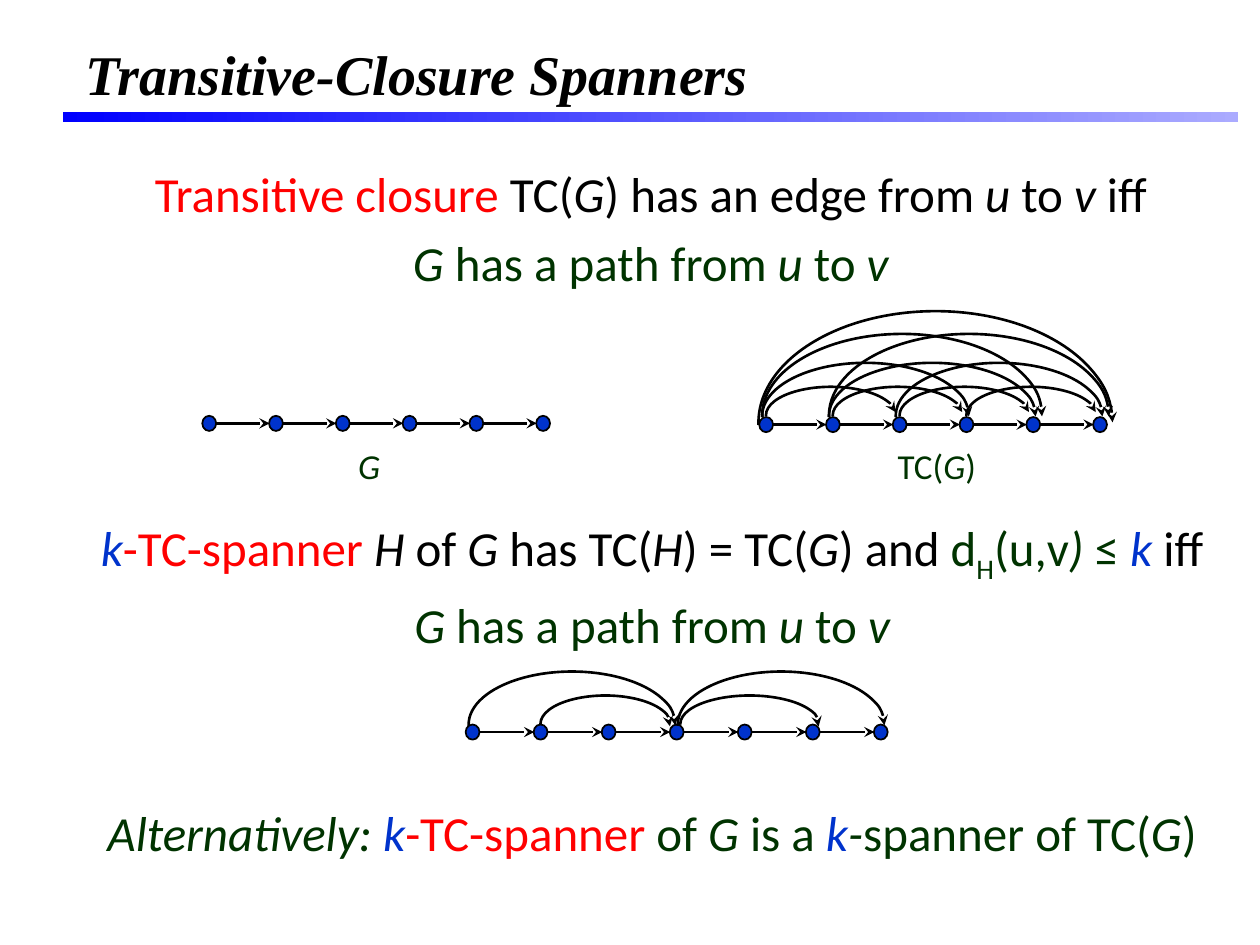
from lxml import etree
from pptx import Presentation
from pptx import util as u
from pptx.dml.color import RGBColor
from pptx.enum import shapes, text
from pptx.oxml.ns import qn

Inches, Pt = u.Inches, u.Pt
COLORS = {"black": "000000", "red": "FF0000", "green": "003300", "blue": "0033CC",
          "bar_start": "0000FF", "bar_end": "ABABFF"}
DOT_WIDTH, DOT_HEIGHT = 0.12, 0.11
ARC_START = 107.55
PATH_CLAIM = [("green", "*G *has a path from* u *to *v*")]


def rgb(name):
    return RGBColor.from_string(COLORS[name])


def add_runs(para, pieces, size, font="Calibri", bold=None):
    """Each piece is (colour, text[, baseline]); asterisks switch italics on and off."""
    for color, marked, *baseline in pieces:
        for index, words in enumerate(marked.split("*")):
            if not words:
                continue
            span = para.add_run()
            span.text = words
            span.font.name, span.font.size, span.font.bold = font, Pt(size), bold
            span.font.italic = index % 2 == 1
            span.font.color.rgb = rgb(color)
            if baseline:
                span.font._element.set("baseline", str(baseline[0]))


def add_box(page, left, top, width, height, wrap=True):
    box = page.shapes.add_textbox(*map(Inches, (left, top, width, height)))
    box.text_frame.word_wrap = wrap
    return box.text_frame


def add_heading(page, left, top, width, height):
    bar = page.shapes.add_shape(shapes.MSO_SHAPE.RECTANGLE, Inches(left - 0.08),
                                Inches(top + 0.81), Inches(9.33), Inches(0.08))
    bar.shadow.inherit = False
    bar.line.fill.background()
    bar.fill.gradient()
    bar.fill.gradient_angle = 0
    for stop, name in zip(bar.fill.gradient_stops, ("bar_start", "bar_end")):
        stop.color.rgb = rgb(name)
    frame = add_box(page, left, top, width, height)
    frame.vertical_anchor = text.MSO_ANCHOR.MIDDLE
    add_runs(frame.paragraphs[0], [("black", "*Transitive-Closure Spanners*")],
             32, "Times New Roman", True)


def add_statement(page, left, top, width, height, lines):
    """Centred lines, each given as (space before in points, pieces)."""
    frame = add_box(page, left, top, width, height)
    for index, (space, pieces) in enumerate(lines):
        para = frame.add_paragraph() if index else frame.paragraphs[0]
        para.alignment = text.PP_ALIGN.CENTER
        para.space_before = Pt(space)
        add_runs(para, pieces, 28)


def add_label(page, left, top, width, height, pieces):
    frame = add_box(page, left, top, width, height, wrap=False)
    frame.paragraphs[0].alignment = text.PP_ALIGN.CENTER
    add_runs(frame.paragraphs[0], pieces, 20)


def style_arrow(line):
    line.color.rgb = rgb("black")
    line.width = Pt(1.5)
    etree.SubElement(line._get_or_add_ln(), qn("a:tailEnd"), type="stealth")


def add_dot(page, x, y):
    dot = page.shapes.add_shape(
        shapes.MSO_SHAPE.FLOWCHART_CONNECTOR, Inches(x - DOT_WIDTH / 2),
        Inches(y - DOT_HEIGHT / 2), Inches(DOT_WIDTH), Inches(DOT_HEIGHT))
    dot.rotation = 90
    dot.shadow.inherit = False
    dot.fill.solid()
    dot.fill.fore_color.rgb = rgb("blue")
    dot.line.color.rgb = rgb("black")
    dot.line.width = Pt(1)


def add_chain(page, x, y, count, pitch):
    """A row of dots, each joined to the next by an arrow."""
    add_dot(page, x, y)
    for step in range(1, count):
        end = x + step * pitch
        arrow = page.shapes.add_connector(
            shapes.MSO_CONNECTOR.STRAIGHT, Inches(end - pitch + 0.05), Inches(y),
            Inches(end - 0.05), Inches(y))
        style_arrow(arrow.line)
        etree.SubElement(arrow._element.spPr, qn("a:effectLst"))
        add_dot(page, end, y)


def add_arc(page, left, top, width, height, end):
    arc = page.shapes.add_shape(shapes.MSO_SHAPE.ARC,
                                *map(Inches, (left, top, width, height)))
    arc.adjustments[0], arc.adjustments[1] = ARC_START, end
    arc.shadow.inherit = False
    arc.fill.background()
    style_arrow(arc.line)


def add_closure_graph(page, x, y, pitch):
    add_chain(page, x, y, 6, pitch)
    # count of arcs, left offset, rise, width, height, end angle
    for count, offset, rise, width, height, end in (
            (4, 0, 0.3, 1.03, 0.45, 214.35),
            (3, -0.03, 0.49, 1.64, 0.84, 0.29),
            (2, -0.03, 0.72, 2.22, 1.29, 0.29),
            (1, -0.06, 0.9, 2.81, 1.77, 215.94)):
        for index in range(count):
            add_arc(page, x + offset + index * pitch, y - rise, width, height, end)


def add_spanner_graph(page, x, y, pitch):
    add_chain(page, x, y, 7, pitch)
    for offset in (-0.03, 1.63):
        add_arc(page, x + offset, y - 0.48, 1.64, 0.84, 0.29)
    for offset, width in ((0.54, 1.03), (1.65, 1.1)):
        add_arc(page, x + offset, y - 0.29, width, 0.45, 1.33)


def main():
    deck = Presentation()
    deck.slide_width, deck.slide_height = Inches(10), Inches(7.5)
    page = deck.slides.add_slide(deck.slide_layouts[6])
    add_heading(page, 0.58, 0.08, 8.5, 1)
    add_statement(page, 0.58, 1.25, 9.17, 1.72, [
        (5.6, [("red", "Transitive closure "),
               ("black", "TC(*G*) has an edge from *u* to *v* iff")]),
        (5.6, PATH_CLAIM)])
    add_statement(page, 0.59, 4.06, 9.17, 1.72, [
        (5.6, [("blue", "*k*"), ("red", "-TC-spanner "),
               ("black", "*H *of *G* has TC(*H*) = TC(*G*) and "),
               ("green", "d"), ("green", "H", -25000), ("green", "(u,v*) *≤ "),
               ("blue", "*k*"), ("black", " iff")]),
        (5.6, PATH_CLAIM),
        (85, [("green", "*Alternatively: *"), ("blue", "*k*"), ("red", "-TC-spanner"),
              ("green", " of *G* is a "), ("blue", "*k*"),
              ("green", "*-*spanner of TC(*G*)")])])
    add_chain(page, 1.66, 3.36, 6, 0.53)
    add_closure_graph(page, 6.08, 3.37, 0.53)
    add_spanner_graph(page, 3.75, 5.81, 0.54)
    add_label(page, 2.74, 3.48, 0.38, 0.44, [("green", "*G*")])
    add_label(page, 7.02, 3.48, 0.83, 0.44, [("green", "TC(*G*)")])
    deck.save("out.pptx")


if __name__ == "__main__":
    main()
